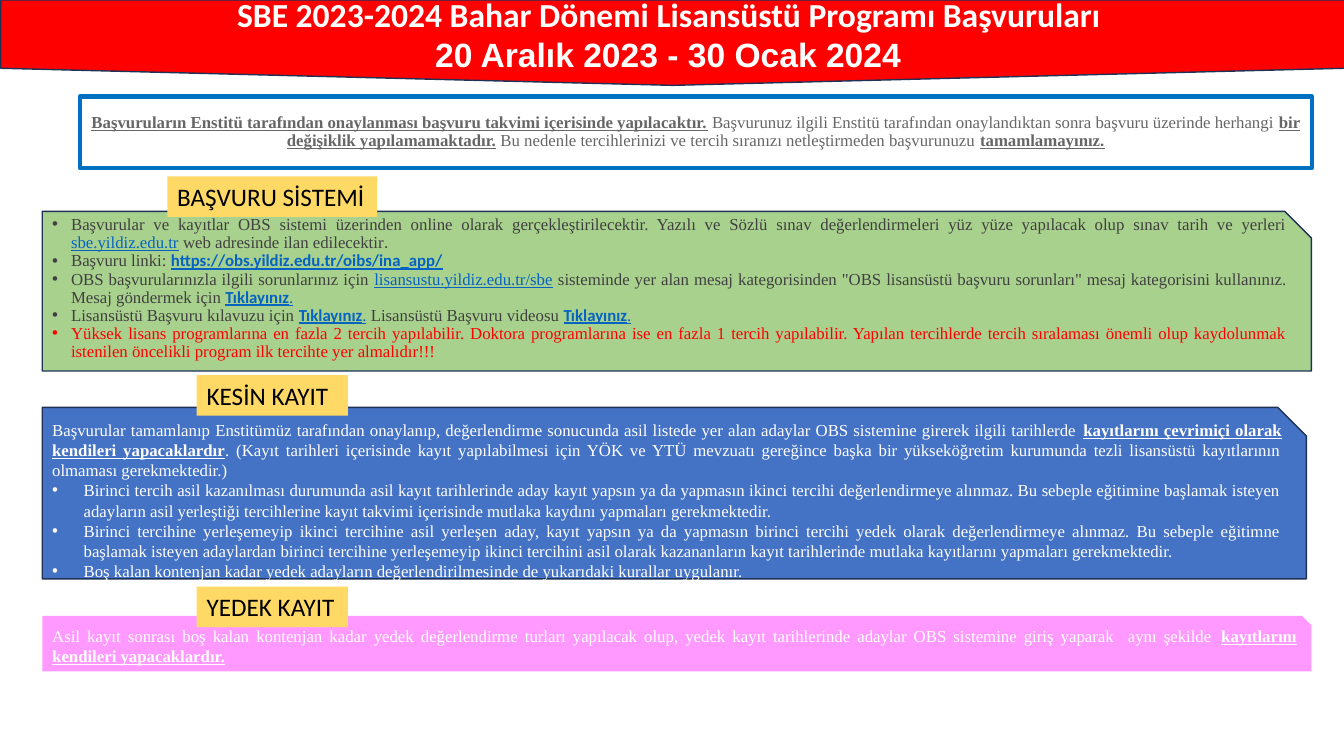
from dataclasses import dataclass
from typing import Any, Optional

from lxml import etree
from pptx import Presentation
from pptx.dml.color import RGBColor
from pptx.enum.shapes import MSO_SHAPE
from pptx.enum.text import MSO_ANCHOR, MSO_AUTO_SIZE, PP_ALIGN
from pptx.oxml.ns import qn
from pptx.util import Pt

RECT = MSO_SHAPE.RECTANGLE
SNIPPED = MSO_SHAPE.SNIP_1_RECTANGLE
BANNER = MSO_SHAPE.FLOWCHART_OFFPAGE_CONNECTOR
TOP, MIDDLE = MSO_ANCHOR.TOP, MSO_ANCHOR.MIDDLE
LEFT, CENTER, JUSTIFY = PP_ALIGN.LEFT, PP_ALIGN.CENTER, PP_ALIGN.JUSTIFY
GROW, FIXED = MSO_AUTO_SIZE.SHAPE_TO_FIT_TEXT, MSO_AUTO_SIZE.NONE

WHITE = RGBColor(0xFF, 0xFF, 0xFF)
BLACK = RGBColor(0x00, 0x00, 0x00)
RED = RGBColor(0xFF, 0x00, 0x00)
NAVY = RGBColor(0x1E, 0x32, 0x56)
FRAME_BLUE = RGBColor(0x00, 0x70, 0xC0)
LINK_BLUE = RGBColor(0x05, 0x63, 0xC1)
PANEL_BLUE = RGBColor(0x44, 0x72, 0xC4)
GREEN = RGBColor(0xA9, 0xD1, 0x8E)
PINK = RGBColor(0xFF, 0x99, 0xFF)
YELLOW = RGBColor(0xFF, 0xD9, 0x66)
GREY = RGBColor(0x66, 0x66, 0x66)
DARK_GREY = RGBColor(0x40, 0x40, 0x40)

Format = dict[str, Any]
Run = tuple[str, Format]

SERIF: Format = {"name": "Times New Roman", "size": Pt(12), "bold": False, "underline": False}
STRONG: Format = {"bold": True, "underline": True}
NOTICE = SERIF | {"color": GREY}
SYSTEM = SERIF | {"color": DARK_GREY}
LINK = SYSTEM | {"color": LINK_BLUE, "underline": True}
BOLD_LINK = LINK | {"name": "Calibri", "bold": True}
WARNING = SERIF | {"color": RED}
REVERSED = SERIF | {"color": WHITE}
TITLE: Format = {"name": "Calibri", "size": Pt(24), "bold": True, "color": WHITE}
DATES = TITLE | {"name": "Arial"}
LABEL: Format = {"name": "Calibri", "size": Pt(18), "color": BLACK}

CLICK_HERE: list[Run] = [("Tıklayınız", BOLD_LINK), (".", LINK)]


@dataclass
class Paragraph:
    runs: list[Run]
    align: Any = JUSTIFY
    spacing: Optional[float] = None
    bullet_indent: float = 0


@dataclass
class Panel:
    kind: Any
    left: float
    top: float
    width: float
    height: float
    paragraphs: list[Paragraph]
    fill: Optional[RGBColor] = None
    line: Optional[RGBColor] = None
    line_width: float = 1
    anchor: Any = MIDDLE
    auto_size: Any = FIXED
    bottom_inset: float = 3.6


def system_item(*runs: Run) -> Paragraph:
    return Paragraph(list(runs), spacing=0.9, bullet_indent=13.5)


def rule_item(text: str) -> Paragraph:
    return Paragraph([(text, REVERSED)], bullet_indent=22.5)


def heading(text: str, left: float, top: float, width: float) -> Panel:
    return Panel(RECT, left, top, width, 29, [Paragraph([(text, LABEL)], LEFT)],
                 fill=YELLOW, anchor=TOP, auto_size=GROW)


def add_bullet(paragraph: Any, indent: float) -> None:
    properties = paragraph._p.get_or_add_pPr()
    properties.set("marL", str(Pt(indent)))
    properties.set("indent", str(-Pt(indent)))
    etree.SubElement(properties, qn("a:buFont"), typeface="Arial")
    etree.SubElement(properties, qn("a:buChar"), char="•")


def write_paragraph(paragraph: Any, content: Paragraph) -> None:
    paragraph.alignment = content.align
    if content.spacing:
        paragraph.line_spacing = content.spacing
    if content.bullet_indent:
        add_bullet(paragraph, content.bullet_indent)
    for text, text_format in content.runs:
        run = paragraph.add_run()
        run.text = text
        for attribute, value in text_format.items():
            if attribute == "color":
                run.font.color.rgb = value
            else:
                setattr(run.font, attribute, value)


def draw_panel(slide: Any, panel: Panel) -> None:
    shape = slide.shapes.add_shape(panel.kind, Pt(panel.left), Pt(panel.top),
                                   Pt(panel.width), Pt(panel.height))
    shape.shadow.inherit = False
    if panel.fill is None:
        shape.fill.background()
    else:
        shape.fill.solid()
        shape.fill.fore_color.rgb = panel.fill
    if panel.line is None:
        shape.line.fill.background()
    else:
        shape.line.color.rgb = panel.line
        shape.line.width = Pt(panel.line_width)
    frame = shape.text_frame
    frame_format = {"word_wrap": True, "vertical_anchor": panel.anchor,
                    "auto_size": panel.auto_size, "margin_bottom": Pt(panel.bottom_inset)}
    for attribute, value in frame_format.items():
        setattr(frame, attribute, value)
    for index, content in enumerate(panel.paragraphs):
        write_paragraph(frame.add_paragraph() if index else frame.paragraphs[0], content)


NOTICE_TEXT = [Paragraph([
    ("Başvuruların Enstitü tarafından onaylanması başvuru takvimi içerisinde yapılacaktır.", NOTICE | STRONG),
    (" Başvurunuz ilgili Enstitü tarafından onaylandıktan sonra başvuru üzerinde herhangi ", NOTICE),
    ("bir değişiklik yapılamamaktadır.", NOTICE | STRONG),
    (" Bu nedenle tercihlerinizi ve tercih sıranızı netleştirmeden başvurunuzu ", NOTICE),
    ("tamamlamayınız.", NOTICE | STRONG),
], CENTER, 0.9)]

TITLE_TEXT = [
    Paragraph([("SBE 2023-2024 Bahar Dönemi Lisansüstü Programı Başvuruları ", TITLE)], CENTER),
    Paragraph([("20 Aralık 2023 - 30 Ocak 2024 ", DATES)], CENTER),
]

SYSTEM_TEXT = [
    system_item(
        ("Başvurular ve kayıtlar OBS sistemi üzerinden online olarak gerçekleştirilecektir. Yazılı ve Sözlü sınav "
         "değerlendirmeleri yüz yüze yapılacak olup sınav tarih ve yerleri ", SYSTEM),
        ("sbe.yildiz.edu.tr", LINK),
        (" web adresinde ilan edilecektir", SYSTEM),
        (".", SYSTEM | {"name": "Calibri"})),
    system_item(("Başvuru linki: ", SYSTEM), ("https://obs.yildiz.edu.tr/oibs/ina_app/", BOLD_LINK)),
    system_item(
        ("OBS başvurularınızla ilgili sorunlarınız için ", SYSTEM),
        ("lisansustu.yildiz.edu.tr/sbe", LINK),
        (" sisteminde yer alan mesaj kategorisinden \"OBS lisansüstü başvuru sorunları\" mesaj kategorisini "
         "kullanınız. Mesaj göndermek için ", SYSTEM),
        *CLICK_HERE),
    system_item(("Lisansüstü Başvuru kılavuzu için ", SYSTEM), *CLICK_HERE,
                (" Lisansüstü Başvuru videosu ", SYSTEM), *CLICK_HERE),
    system_item(
        ("Yüksek lisans programlarına en fazla 2 tercih yapılabilir. Doktora programlarına ise en fazla 1 tercih "
         "yapılabilir. Yapılan tercihlerde tercih sıralaması önemli olup kaydolunmak istenilen öncelikli program "
         "ilk tercihte yer almalıdır!!!", WARNING)),
]

REGISTRATION_TEXT = [
    Paragraph([
        ("Başvurular tamamlanıp Enstitümüz tarafından onaylanıp, değerlendirme sonucunda asil listede yer alan "
         "adaylar OBS sistemine girerek ilgili tarihlerde ", REVERSED),
        ("kayıtlarını çevrimiçi olarak kendileri yapacaklardır", REVERSED | STRONG),
        (". (Kayıt tarihleri içerisinde kayıt yapılabilmesi için YÖK ve YTÜ mevzuatı gereğince başka bir "
         "yükseköğretim kurumunda tezli lisansüstü kayıtlarının olmaması gerekmektedir.)", REVERSED)]),
    rule_item("Birinci tercih asil kazanılması durumunda asil kayıt tarihlerinde aday kayıt yapsın ya da yapmasın "
              "ikinci tercihi değerlendirmeye alınmaz. Bu sebeple eğitimine başlamak isteyen adayların asil "
              "yerleştiği tercihlerine kayıt takvimi içerisinde mutlaka kaydını yapmaları gerekmektedir."),
    rule_item("Birinci tercihine yerleşemeyip ikinci tercihine asil yerleşen aday, kayıt yapsın ya da yapmasın "
              "birinci tercihi yedek olarak değerlendirmeye alınmaz. Bu sebeple eğitimne başlamak isteyen "
              "adaylardan birinci tercihine yerleşemeyip ikinci tercihini asil olarak kazananların kayıt "
              "tarihlerinde mutlaka kayıtlarını yapmaları gerekmektedir."),
    rule_item("Boş kalan kontenjan kadar yedek adayların değerlendirilmesinde de yukarıdaki kurallar uygulanır."),
]

RESERVE_TEXT = [Paragraph([
    ("Asil kayıt sonrası boş kalan kontenjan kadar yedek değerlendirme turları yapılacak olup, yedek kayıt "
     "tarihlerinde adaylar OBS sistemine giriş yaparak  aynı şekilde ", REVERSED),
    ("kayıtlarını kendileri yapacaklardır.", REVERSED | STRONG),
])]

PANELS = [
    Panel(RECT, 57, 69, 880, 51, NOTICE_TEXT, line=FRAME_BLUE, line_width=3),
    Panel(BANNER, 0.5, 0, 960, 61, TITLE_TEXT, fill=RED, line=NAVY),
    Panel(SNIPPED, 30.2, 151, 906.5, 114, SYSTEM_TEXT, fill=GREEN, line=NAVY, bottom_inset=16.6),
    heading("BAŞVURU SİSTEMİ", 119.5, 126, 150),
    Panel(SNIPPED, 30.2, 291, 903, 122.5, REGISTRATION_TEXT, fill=PANEL_BLUE, line=NAVY),
    heading("KESİN KAYIT", 140.5, 268, 108),
    Panel(SNIPPED, 30.2, 440, 906.5, 39.5, RESERVE_TEXT, fill=PINK, anchor=TOP, auto_size=GROW),
    heading("YEDEK KAYIT", 140.5, 419, 108),
]


def main() -> None:
    presentation = Presentation()
    presentation.slide_width, presentation.slide_height = Pt(960), Pt(540)
    slide = presentation.slides.add_slide(presentation.slide_layouts[6])
    for panel in PANELS:
        draw_panel(slide, panel)
    presentation.save("out.pptx")


if __name__ == "__main__":
    main()
